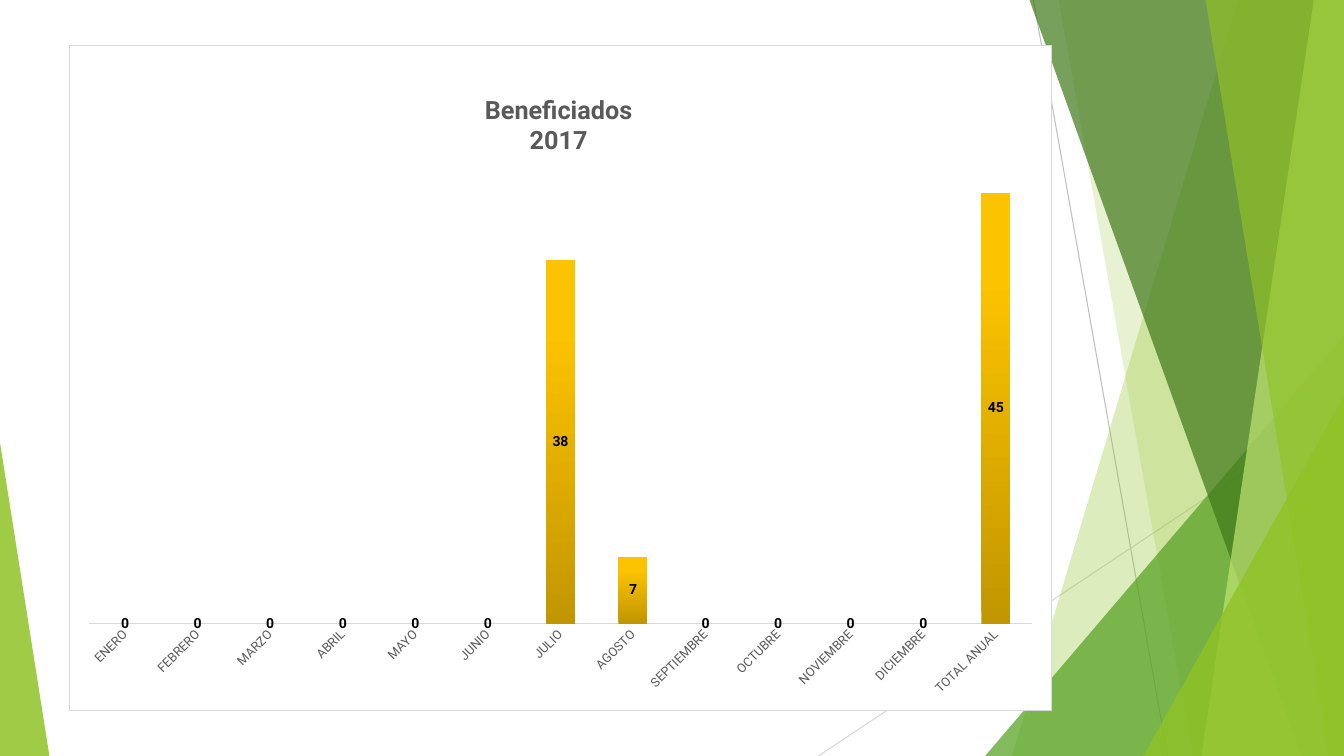
from copy import deepcopy

from lxml.etree import SubElement
from pptx import Presentation
from pptx.chart.data import CategoryChartData
from pptx.dml.color import RGBColor
from pptx.enum.chart import XL_CHART_TYPE as Chart, XL_LABEL_POSITION as LabelPosition, XL_TICK_MARK as Tick
from pptx.enum.shapes import MSO_CONNECTOR as Connector, MSO_SHAPE as Shape
from pptx.oxml import parse_xml
from pptx.oxml.ns import nsdecls, qn
from pptx.util import Inches, Pt

WHITE = RGBColor(0xFF, 0xFF, 0xFF)
BLACK = RGBColor(0, 0, 0)
TEXT_GRAY = RGBColor(0x59, 0x59, 0x59)
LINE_GRAY = RGBColor(0xBF, 0xBF, 0xBF)
PALE_GRAY = RGBColor(0xD9, 0xD9, 0xD9)
LIME = RGBColor(0x90, 0xC2, 0x26)
LIGHT_LIME = RGBColor(0xC0, 0xE4, 0x74)
GREEN = RGBColor(0x54, 0xA0, 0x21)
DARK_GREEN = RGBColor(0x3F, 0x78, 0x19)
GOLD_STOPS = [
    (0, RGBColor(0xC2, 0x96, 0x00)),
    (0.8, RGBColor(0xFC, 0xC3, 0x00)),
    (1, RGBColor(0xFD, 0xC4, 0x00)),
]

MONTHS = ["ENERO", "FEBRERO", "MARZO", "ABRIL", "MAYO", "JUNIO", "JULIO", "AGOSTO",
          "SEPTIEMBRE", "OCTUBRE", "NOVIEMBRE", "DICIEMBRE"]
BENEFICIARIES = [0, 0, 0, 0, 0, 0, 38, 7, 0, 0, 0, 0]


class FacetSlide:
    """Draws a faceted slide, with every length a percentage of the slide."""

    font = "Roboto"

    def __init__(self, deck):
        self.width, self.height = deck.slide_width, deck.slide_height
        self.shapes = deck.slides.add_slide(deck.slide_layouts[6]).shapes

    def at(self, x, y):
        return round(self.width * x / 100), round(self.height * y / 100)

    def tint(self, facet, color, opacity):
        facet.shadow.inherit = False
        facet.line.fill.background()
        facet.fill.solid()
        facet.fill.fore_color.rgb = color
        swatch = facet._element.spPr.find(qn("a:solidFill"))[0]
        SubElement(swatch, qn("a:alpha"), val=str(opacity * 1000))

    def ray(self, start, end, color):
        ray = self.shapes.add_connector(Connector.STRAIGHT, *self.at(*start), *self.at(*end))
        ray.line.color.rgb = color
        ray.line.width = Pt(0.75)
        SubElement(ray._element.spPr, qn("a:effectLst"))

    def shard(self, top, bottom, color, opacity):
        outline = self.shapes.build_freeform(*self.at(top, 0), scale=1.0)
        corners = [(100, 0), (100, 100), (bottom, 100)]
        outline.add_line_segments([self.at(*corner) for corner in corners], close=True)
        self.tint(outline.convert_to_shape(), color, opacity)

    def corner(self, left, top, right, peak, color, opacity):
        corner = self.shapes.add_shape(
            Shape.ISOSCELES_TRIANGLE, *self.at(left, top), *self.at(right - left, 100 - top))
        corner.adjustments[0] = peak
        self.tint(corner, color, opacity)

    def style(self, font, size, color, bold=False):
        font.name, font.size, font.bold = self.font, Pt(size), bold
        font.color.rgb = color

    def arrange(self, parent, index, **shares):
        for old in parent.findall(qn("c:layout")):
            parent.remove(old)
        layout = parse_xml(f"<c:layout {nsdecls('c')}><c:manualLayout/></c:layout>")
        manual = layout[0]
        if "w" in shares:
            SubElement(manual, qn("c:layoutTarget"), val="inner")
        for mode in ("xMode", "yMode"):
            SubElement(manual, qn(f"c:{mode}"), val="edge")
        for side, share in shares.items():
            SubElement(manual, qn(f"c:{side}"), val=str(share))
        parent.insert(index, layout)

    def columns(self, left, top, width, height, title, categories, values):
        data = CategoryChartData(number_format="0")
        data.categories = categories
        data.add_series(title.replace("\n", " "), values)
        chart = self.shapes.add_chart(
            Chart.COLUMN_STACKED, *self.at(left, top), *self.at(width, height), data).chart
        self.style(chart.font, 10, BLACK)
        chart.has_legend = False
        self.frame(chart)
        self.heading(chart, title)
        self.axes(chart)
        self.bars(chart.plots[0])
        self.arrange(chart._chartSpace.chart.plotArea, 0, x=0.02, y=0.15, w=0.96, h=0.72)

    def frame(self, chart):
        chart._chartSpace.find(qn("c:txPr")).addprevious(parse_xml(
            f"<c:spPr {nsdecls('c', 'a')}>"
            f'<a:solidFill><a:srgbClr val="{WHITE}"/></a:solidFill>'
            f'<a:ln w="{Pt(0.75)}"><a:solidFill><a:srgbClr val="{PALE_GRAY}"/></a:solidFill></a:ln>'
            "</c:spPr>"))

    def heading(self, chart, title):
        heading = chart.chart_title
        heading.text_frame.text = title
        for line in heading.text_frame.paragraphs:
            self.style(line.font, 18, TEXT_GRAY, bold=True)
        heading.include_in_layout = False
        self.arrange(heading._element, 1, x=0.42, y=0.07)

    def axes(self, chart):
        months, counts = chart.category_axis, chart.value_axis
        self.style(months.tick_labels.font, 9, TEXT_GRAY)
        months._element.find(qn("c:txPr")).find(qn("a:bodyPr")).set("rot", "-2700000")
        months.major_tick_mark = months.minor_tick_mark = Tick.NONE
        months.format.line.color.rgb = PALE_GRAY
        months.format.line.width = Pt(1)
        counts.minimum_scale, counts.maximum_scale = 0, 50
        counts.has_major_gridlines = False
        counts.visible = False

    def bars(self, plot):
        plot.gap_width, plot.overlap = 150, 100
        plot.vary_by_categories = False
        fill = plot.series[0].format.fill
        fill.gradient()
        fill.gradient_angle = 90
        stops = plot.series[0]._element.xpath(".//a:gsLst")[0]
        stops.append(deepcopy(stops[0]))
        for stop, (position, color) in zip(fill.gradient_stops, GOLD_STOPS):
            stop.position, stop.color.rgb = position, color
        plot.has_data_labels = True
        labels = plot.data_labels
        labels.show_value = True
        labels.position = LabelPosition.CENTER
        self.style(labels.font, 10, BLACK, bold=True)


def main():
    deck = Presentation()
    deck.slide_width, deck.slide_height = Inches(13.33), Inches(7.5)
    slide = FacetSlide(deck)
    slide.ray((76.9, 0), (86.87, 100), LINE_GRAY)
    slide.ray((100, 53.73), (60.9, 100), PALE_GRAY)
    slide.shard(92.1, 75.3, LIME, 30)
    slide.shard(78.77, 88.75, LIME, 20)
    slide.corner(73.3, 44.4, 100, 1, GREEN, 72)
    slide.shard(76.6, 96.85, DARK_GREEN, 70)
    slide.shard(97.75, 89.4, LIGHT_LIME, 70)
    slide.shard(89.7, 98.87, LIME, 65)
    slide.corner(85.07, 52.4, 100, 1, LIME, 80)
    slide.corner(0, 58.53, 3.68, 0, LIME, 85)
    slide.columns(5.1, 5.9, 73.2, 88.1, "Beneficiados\n2017",
                  MONTHS + ["TOTAL ANUAL"], BENEFICIARIES + [sum(BENEFICIARIES)])
    deck.save("out.pptx")


if __name__ == "__main__":
    main()
